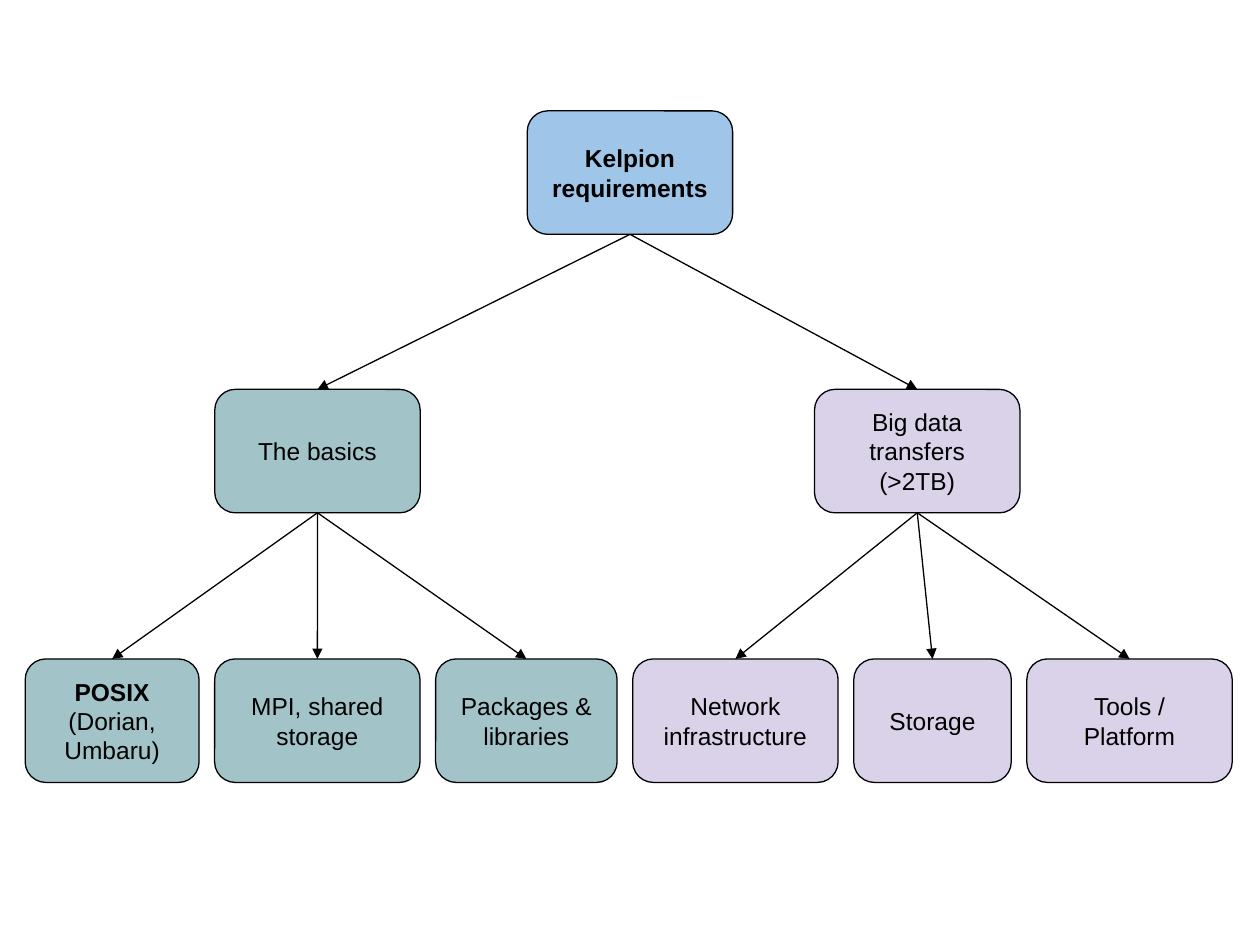
import pptx
import pptx.dml.color
import pptx.enum.shapes
import pptx.enum.text
import pptx.oxml.ns
import pptx.util
from dataclasses import dataclass
from lxml import etree
from pptx.util import Inches


@dataclass(frozen=True)
class Theme:
    font: str = "Arial"
    text_size: float = 14
    line_width: float = 0.75
    ink: str = "000000"
    root: str = "9FC5E8"
    basics: str = "A2C4C9"
    transfers: str = "D9D2E9"


THEME = Theme()
SLIDE_WIDTH, SLIDE_HEIGHT = 10, 7.5
BOX_WIDTH, BOX_HEIGHT = 1.63, 0.98
ROOT_TOP, BRANCH_TOP, LEAF_TOP = 0.88, 3.09, 5.23
ROW_LEFT, ROW_RIGHT = 0.2, 9.78

# Each paragraph is a (text, bold) pair.
ROOT = [("Kelpion requirements", True)]
# Branch: centre, fill, paragraphs, leaves as (width, paragraphs)
BRANCHES = [
    (2.52, THEME.basics, [("The basics", False)], [
        (1.38, [("POSIX", True), ("(Dorian,", False), ("Umbaru)", False)]),
        (BOX_WIDTH, [("MPI, shared storage", False)]),
        (1.44, [("Packages & libraries", False)]),
    ]),
    (7.28, THEME.transfers, [("Big data", False), ("transfers (>2TB)", False)], [
        (BOX_WIDTH, [("Network", False), ("infrastructure", False)]),
        (1.25, [("Storage", False)]),
        (BOX_WIDTH, [("Tools / Platform", False)]),
    ]),
]


def color(value):
    return pptx.dml.color.RGBColor.from_string(value)


def style_line(line):
    line.color.rgb = color(THEME.ink)
    line.width = pptx.util.Pt(THEME.line_width)


def add_box(slide, center, top, width, fill, paragraphs):
    shape = slide.shapes.add_shape(
        pptx.enum.shapes.MSO_SHAPE.ROUNDED_RECTANGLE,
        Inches(center - width / 2), Inches(top), Inches(width), Inches(BOX_HEIGHT))
    shape.shadow.inherit = False
    shape.fill.solid()
    shape.fill.fore_color.rgb = color(fill)
    style_line(shape.line)

    frame = shape.text_frame
    frame.word_wrap = True
    frame.vertical_anchor = pptx.enum.text.MSO_ANCHOR.MIDDLE
    frame.margin_left = frame.margin_right = Inches(0.1)
    frame.margin_top = frame.margin_bottom = Inches(0.1)
    for index, (text, bold) in enumerate(paragraphs):
        paragraph = frame.add_paragraph() if index else frame.paragraphs[0]
        paragraph.alignment = pptx.enum.text.PP_ALIGN.CENTER
        run = paragraph.add_run()
        run.text = text
        run.font.name = THEME.font
        run.font.size = pptx.util.Pt(THEME.text_size)
        run.font.bold = bold
        run.font.color.rgb = color(THEME.ink)
    return shape


def add_arrow(slide, parent, child):
    """Link the bottom of the parent box to the top of the child box."""
    arrow = slide.shapes.add_connector(
        pptx.enum.shapes.MSO_CONNECTOR.STRAIGHT, 0, 0, 0, 0)
    arrow.begin_connect(parent, 2)
    arrow.end_connect(child, 0)
    style_line(arrow.line)
    qn = pptx.oxml.ns.qn
    etree.SubElement(arrow.line._get_or_add_ln(), qn("a:tailEnd"),
                     type="triangle", w="med", len="med")
    etree.SubElement(arrow._element.spPr, qn("a:effectLst"))


def leaf_gap():
    """Equal space between the boxes of the bottom row."""
    widths = [width for *_, leaves in BRANCHES for width, _ in leaves]
    return (ROW_RIGHT - ROW_LEFT - sum(widths)) / (len(widths) - 1)


def add_tree(slide):
    root = add_box(slide, SLIDE_WIDTH / 2, ROOT_TOP, BOX_WIDTH, THEME.root, ROOT)
    left, gap = ROW_LEFT, leaf_gap()
    for center, fill, paragraphs, leaves in BRANCHES:
        branch = add_box(slide, center, BRANCH_TOP, BOX_WIDTH, fill, paragraphs)
        add_arrow(slide, root, branch)
        for width, leaf_paragraphs in leaves:
            leaf = add_box(slide, left + width / 2, LEAF_TOP, width, fill,
                           leaf_paragraphs)
            add_arrow(slide, branch, leaf)
            left += width + gap


def main():
    presentation = pptx.Presentation()
    presentation.slide_width = Inches(SLIDE_WIDTH)
    presentation.slide_height = Inches(SLIDE_HEIGHT)
    slide = presentation.slides.add_slide(presentation.slide_layouts[6])
    add_tree(slide)
    presentation.save("out.pptx")


if __name__ == "__main__":
    main()
